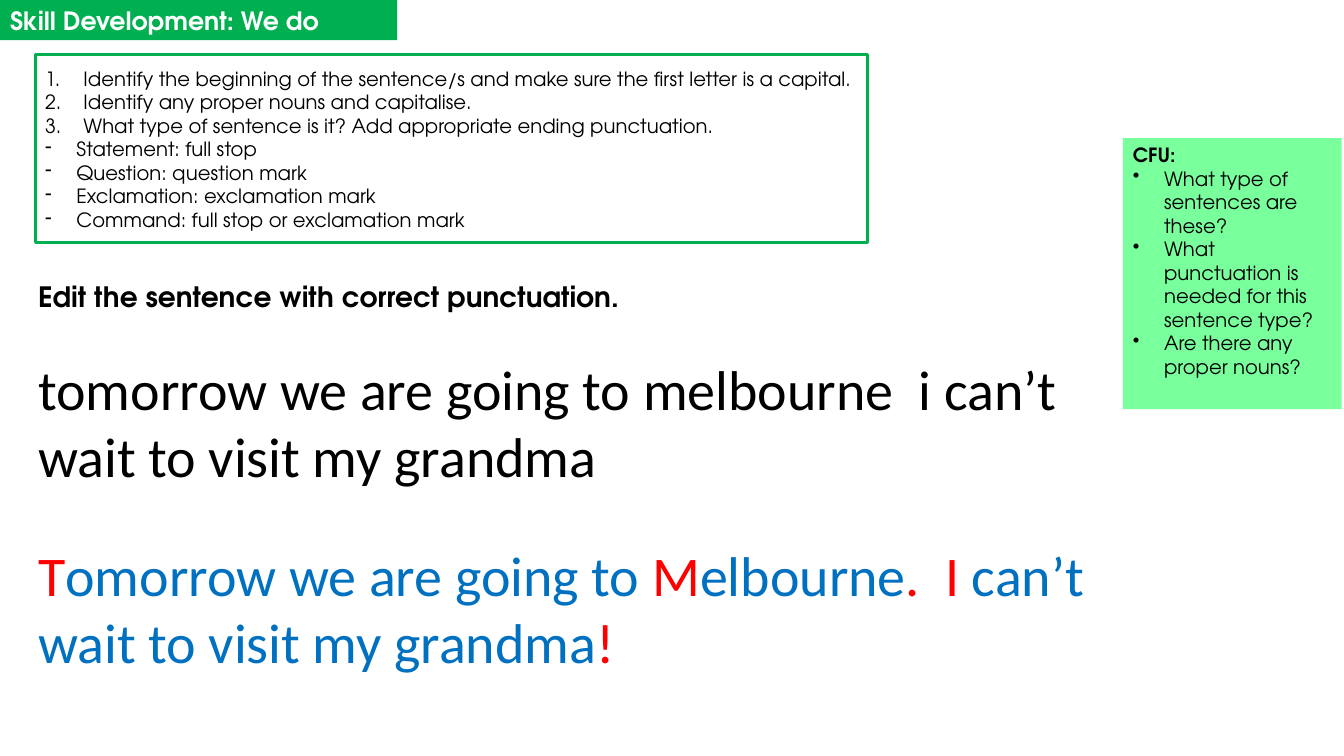
"""Build the punctuation-editing slide of a guided writing lesson."""

from dataclasses import dataclass
from typing import Optional

from lxml.etree import SubElement
from pptx import Presentation
from pptx.dml.color import RGBColor
from pptx.enum.shapes import MSO_SHAPE
from pptx.enum.text import MSO_ANCHOR, MSO_AUTO_SIZE, PP_ALIGN
from pptx.oxml.ns import qn
from pptx.util import Inches, Pt

WIDTH, HEIGHT = Inches(13.33), Inches(7.5)
BLACK = RGBColor(0x00, 0x00, 0x00)
WHITE = RGBColor(0xFF, 0xFF, 0xFF)
GREEN = RGBColor(0x00, 0xB0, 0x50)
MINT = RGBColor(0x79, 0xFF, 0x9C)
BLUE = RGBColor(0x00, 0x70, 0xC0)
RED = RGBColor(0xFF, 0x00, 0x00)
LESSON_FONT, SENTENCE_FONT = "TeX Gyre Adventor", "Calibri"


@dataclass(frozen=True)
class Area:
    """A rectangle in percent of the slide's width and height."""

    left: float
    top: float
    width: float
    height: float

    def place(self, shape) -> None:
        """Move and size a shape to this area."""
        shape.left, shape.width = (int(WIDTH * share / 100) for share in (self.left, self.width))
        shape.top, shape.height = (int(HEIGHT * share / 100) for share in (self.top, self.height))


@dataclass(frozen=True)
class Bullet:
    """A list marker; without a character it counts."""

    indent: float
    character: Optional[str] = None


@dataclass(frozen=True)
class Style:
    """The look of a paragraph."""

    size: int
    font: str = LESSON_FONT
    color: Optional[RGBColor] = BLACK
    bold: bool = False
    bullet: Optional[Bullet] = None
    spacing: Optional[float] = None


@dataclass(frozen=True)
class Span:
    """A piece of text in its own colour."""

    text: str
    color: RGBColor


@dataclass(frozen=True)
class Line:
    """A paragraph of plain text or coloured spans."""

    content: str | tuple[Span, ...]
    style: Style


@dataclass(frozen=True)
class Panel:
    """A box with an area, paragraphs and an optional fill or outline."""

    area: Area
    lines: tuple[Line, ...] = ()
    fill: Optional[RGBColor] = None
    outline: Optional[RGBColor] = None


NUMBERED = Style(14, bullet=Bullet(0.38))
DASHED = Style(14, bullet=Bullet(0.31, "-"))
DOTTED = Style(14, bullet=Bullet(0.31, "•"))
SENTENCE = Style(40, SENTENCE_FONT)
ANSWER = Style(40, SENTENCE_FONT, color=None)

BANNER = Panel(
    Area(0, 0, 29.55, 5.33),
    (Line("Skill Development: We do", Style(18, color=WHITE, bold=True)),),
    fill=GREEN,
)
STEPS = (
    "Identify the beginning of the sentence/s and make sure the first letter is a capital.",
    "Identify any proper nouns and capitalise.",
    "What type of sentence is it? Add appropriate ending punctuation.",
)
ENDINGS = (
    "Statement: full stop",
    "Question: question mark",
    "Exclamation: exclamation mark",
    "Command: full stop or exclamation mark",
)
CHECKS = (
    "What type of sentences are these?",
    "What punctuation is needed for this sentence type?",
    "Are there any proper nouns?",
)
CORRECTED = (
    Span("T", RED),
    Span("omorrow we are going to ", BLUE),
    Span("M", RED),
    Span("elbourne", BLUE),
    Span(".  I", RED),
    Span(" can’t wait to visit my grandma", BLUE),
    Span("!", RED),
)


def listing(texts: tuple[str, ...], style: Style) -> tuple[Line, ...]:
    """Give every text the same style."""
    return tuple(Line(text, style) for text in texts)


PANELS = (
    Panel(
        Area(2.1, 46.27, 79.12, 19.33),
        (Line("tomorrow we are going to melbourne  i can’t wait to visit my grandma", SENTENCE),),
    ),
    Panel(Area(2.1, 70.8, 81.38, 19.33), (Line(CORRECTED, ANSWER),)),
    Panel(
        Area(83.55, 18.27, 16.28, 35.87),
        (Line("CFU:", Style(14, bold=True)),) + listing(CHECKS, DOTTED),
        fill=MINT,
    ),
    Panel(Area(2.62, 7.2, 61.95, 24.93), outline=GREEN),
    Panel(Area(2.62, 8.13, 61.95, 26), listing(STEPS, NUMBERED) + listing(ENDINGS, DASHED)),
    Panel(
        Area(2.1, 36.8, 97.12, 6.8),
        (Line("Edit the sentence with correct punctuation.", Style(20, bold=True, spacing=0.9)),),
    ),
)


def add_bullet(paragraph, bullet: Bullet) -> None:
    """Give a paragraph a hanging list marker."""
    properties = paragraph._p.get_or_add_pPr()
    properties.set("marL", str(Inches(bullet.indent)))
    properties.set("indent", str(-Inches(bullet.indent)))
    if bullet.character:
        SubElement(properties, qn("a:buChar")).set("char", bullet.character)
    else:
        SubElement(properties, qn("a:buAutoNum")).set("type", "arabicPeriod")


def write_line(paragraph, line: Line) -> None:
    """Fill and format one paragraph."""
    style = line.style
    paragraph.alignment = PP_ALIGN.LEFT
    if style.spacing:
        paragraph.line_spacing = style.spacing
    if style.bullet:
        add_bullet(paragraph, style.bullet)
    font = paragraph.font
    font.name, font.size, font.bold = style.font, Pt(style.size), style.bold
    if style.color is not None:
        font.color.rgb = style.color
    if isinstance(line.content, str):
        paragraph.add_run().text = line.content
        return
    for span in line.content:
        run = paragraph.add_run()
        run.text = span.text
        run.font.color.rgb = span.color


def format_panel(shape, panel: Panel) -> None:
    """Place a shape and write its paragraphs."""
    panel.area.place(shape)
    if panel.fill is not None:
        shape.fill.solid()
        shape.fill.fore_color.rgb = panel.fill
    frame = shape.text_frame
    frame.word_wrap, frame.auto_size = True, MSO_AUTO_SIZE.NONE
    frame.vertical_anchor = MSO_ANCHOR.TOP
    for index, line in enumerate(panel.lines):
        write_line(frame.add_paragraph() if index else frame.paragraphs[0], line)


def add_panel(page, panel: Panel) -> None:
    """Add a rectangle for a filled or outlined panel, else a text box."""
    if panel.fill is None and panel.outline is None:
        shape = page.shapes.add_textbox(0, 0, 0, 0)
    else:
        shape = page.shapes.add_shape(MSO_SHAPE.RECTANGLE, 0, 0, 0, 0)
        shape.shadow.inherit = False
        shape.fill.background()
        shape.line.fill.background()
    if panel.outline is not None:
        shape.line.color.rgb, shape.line.width = panel.outline, Pt(2)
    format_panel(shape, panel)


def main() -> None:
    """Build and save the deck."""
    deck = Presentation()
    deck.slide_width, deck.slide_height = WIDTH, HEIGHT
    page = deck.slides.add_slide(deck.slide_layouts[5])
    format_panel(page.shapes.title, BANNER)
    for panel in PANELS:
        add_panel(page, panel)
    deck.save("out.pptx")


if __name__ == "__main__":
    main()
